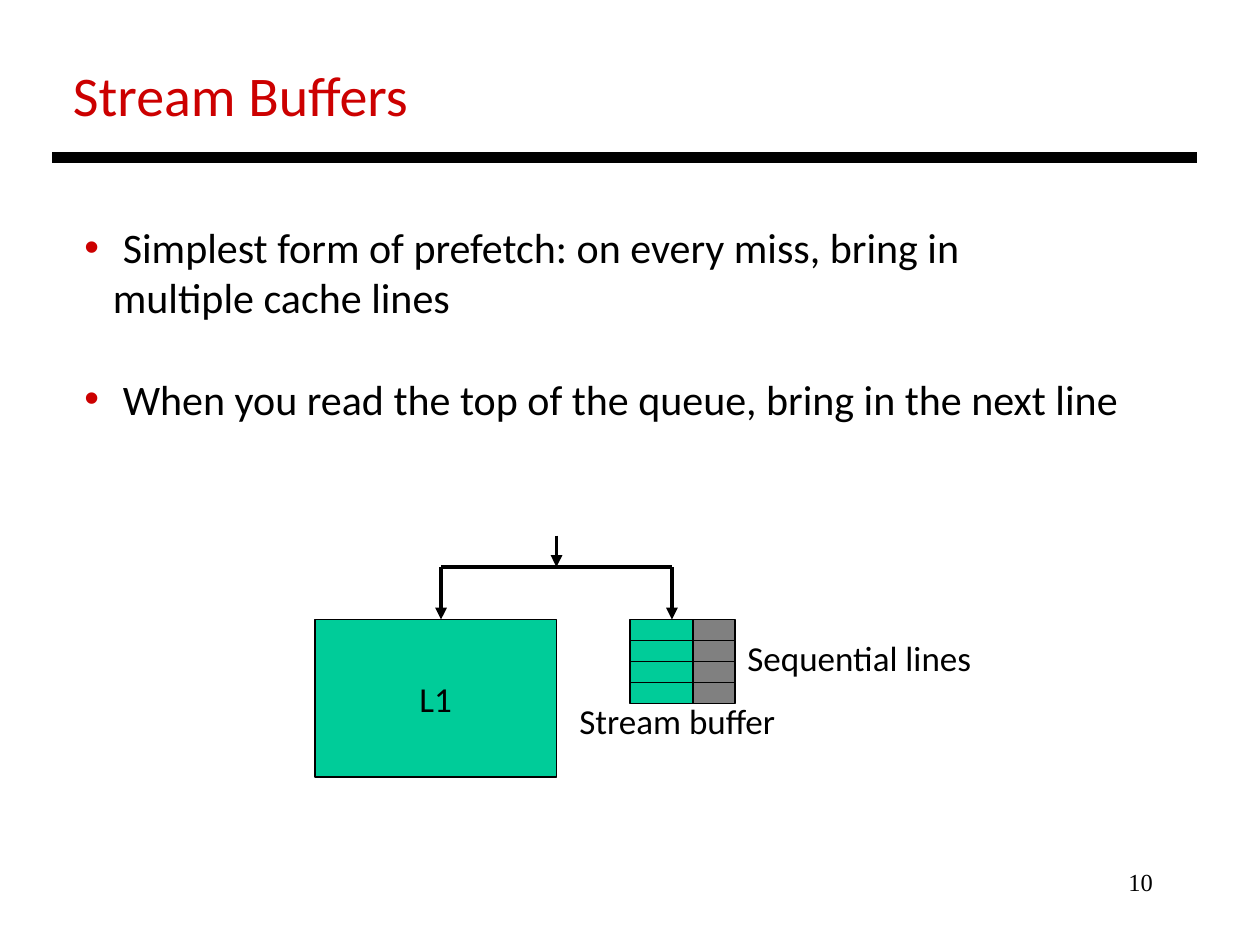
from typing import NamedTuple

from lxml import etree
from pptx import Presentation
from pptx.dml.color import RGBColor
from pptx.enum.shapes import MSO_CONNECTOR, MSO_SHAPE
from pptx.enum.text import MSO_ANCHOR, MSO_AUTO_SIZE, PP_ALIGN
from pptx.oxml.ns import qn
from pptx.util import Pt

RECT = MSO_SHAPE.RECTANGLE
STRAIGHT = MSO_CONNECTOR.STRAIGHT
LEFT, CENTER, RIGHT = PP_ALIGN.LEFT, PP_ALIGN.CENTER, PP_ALIGN.RIGHT
TOP, MIDDLE = MSO_ANCHOR.TOP, MSO_ANCHOR.MIDDLE
NO_FIT = MSO_AUTO_SIZE.NONE

BLACK, RED, GREEN, GRAY = "000000", "CC0000", "00CC99", "808080"


class Box(NamedTuple):
    left: float
    top: float
    width: float
    height: float


class Line(NamedTuple):
    x1: float
    y1: float
    x2: float
    y2: float
    weight: float = 2.25
    arrow: bool = False


class Label(NamedTuple):
    text: str
    box: Box
    size: float = 20
    font: str = "Calibri"
    align: PP_ALIGN = LEFT


class Item(NamedTuple):
    text: str
    indent: float
    bullet: bool = True
    gap: float = 0


L1_CACHE = Box(180, 354, 138, 90)
BUFFER_LEFT, BUFFER_TOP, ROW_HEIGHT, ROWS = 360, 354, 12, 4
BUFFER_COLUMNS = [(36, GREEN), (24, GRAY)]
BRANCH_Y, L1_X, BUFFER_X, INPUT_X = 324, 252, 384, 318

LINES = [
    Line(30, 90, 684, 90, weight=6),
    Line(L1_X, BRANCH_Y, L1_X, BUFFER_TOP, arrow=True),
    Line(BUFFER_X, BRANCH_Y, BUFFER_X, BUFFER_TOP, arrow=True),
    Line(L1_X, BRANCH_Y, BUFFER_X, BRANCH_Y),
    Line(INPUT_X, 306, INPUT_X, BRANCH_Y, arrow=True),
]
LABELS = [
    Label("Stream buffer", Box(324, 396, 128, 31.5)),
    Label("Sequential lines", Box(420, 360, 144, 31.5)),
    Label("10", Box(516, 492, 150, 36), 14, "Times New Roman", RIGHT),
]
ITEMS = [
    Item("Simplest form of prefetch: on every miss, bring in", 22),
    Item("multiple cache lines", 16.3, bullet=False),
    Item("When you read the top of the queue, bring in the next line", 22, gap=29),
]


def rgb(color: str) -> RGBColor:
    return RGBColor.from_string(color)


def place(sp, box: Box) -> None:
    for name, value in box._asdict().items():
        setattr(sp, name, Pt(value))


def format_frame(tf, anchor: MSO_ANCHOR = TOP) -> None:
    values = {"word_wrap": False, "auto_size": NO_FIT, "vertical_anchor": anchor}
    for name, value in values.items():
        setattr(tf, name, value)


def write(p, text: str, size: float, font: str = "Calibri",
          color: str = BLACK, align: PP_ALIGN = LEFT) -> None:
    p.alignment = align
    r = p.add_run()
    r.text = text
    for name, value in {"name": font, "size": Pt(size)}.items():
        setattr(r.font, name, value)
    r.font.color.rgb = rgb(color)


def set_bullet(p, item: Item) -> None:
    """Indent a list paragraph and give it a red bullet or none."""
    pPr = p._p.get_or_add_pPr()
    pPr.set("marL", str(Pt(item.indent)))
    pPr.set("indent", str(-Pt(item.indent) if item.bullet else 0))
    if not item.bullet:
        etree.SubElement(pPr, qn("a:buNone"))
        return
    color = etree.SubElement(pPr, qn("a:buClr"))
    etree.SubElement(color, qn("a:srgbClr"), val=RED)
    etree.SubElement(pPr, qn("a:buFont"), typeface="Arial")
    etree.SubElement(pPr, qn("a:buChar"), char="•")


def add_list(sp, items: list[Item]) -> None:
    tf = sp.text_frame
    format_frame(tf)
    for i, item in enumerate(items):
        p = tf.add_paragraph() if i else tf.paragraphs[0]
        p.space_before = Pt(item.gap)
        write(p, item.text, 24)
        set_bullet(p, item)


def add_rect(s, box: Box, color: str):
    sp = s.shapes.add_shape(RECT, *map(Pt, box))
    sp.shadow.inherit = False
    sp.fill.solid()
    sp.fill.fore_color.rgb = rgb(color)
    sp.line.color.rgb = rgb(BLACK)
    sp.line.width = Pt(0.75)
    return sp


def add_line(s, line: Line) -> None:
    ends = (line.x1, line.y1, line.x2, line.y2)
    cx = s.shapes.add_connector(STRAIGHT, *map(Pt, ends))
    cx.line.color.rgb = rgb(BLACK)
    cx.line.width = Pt(line.weight)
    if line.arrow:
        etree.SubElement(cx.line._get_or_add_ln(), qn("a:tailEnd"), type="triangle")
    etree.SubElement(cx._element.spPr, qn("a:effectLst"))


def add_label(s, label: Label) -> None:
    tf = s.shapes.add_textbox(*map(Pt, label.box)).text_frame
    format_frame(tf)
    write(tf.paragraphs[0], label.text, label.size, label.font, align=label.align)


def main() -> None:
    prs = Presentation()
    prs.slide_width, prs.slide_height = Pt(720), Pt(540)
    s = prs.slides.add_slide(prs.slide_layouts[1])

    title, body = s.placeholders
    place(title, Box(34.5, 31, 208, 46))
    format_frame(title.text_frame)
    write(title.text_frame.paragraphs[0], "Stream Buffers", 32, color=RED)
    place(body, Box(41, 123, 606, 124))
    add_list(body, ITEMS)

    tf = add_rect(s, L1_CACHE, GREEN).text_frame
    format_frame(tf, MIDDLE)
    write(tf.paragraphs[0], "L1", 20, align=CENTER)

    for row in range(ROWS):
        left = BUFFER_LEFT
        for width, color in BUFFER_COLUMNS:
            top = BUFFER_TOP + row * ROW_HEIGHT
            add_rect(s, Box(left, top, width, ROW_HEIGHT), color)
            left += width

    for line in LINES:
        add_line(s, line)
    for label in LABELS:
        add_label(s, label)

    prs.save("out.pptx")


if __name__ == "__main__":
    main()
